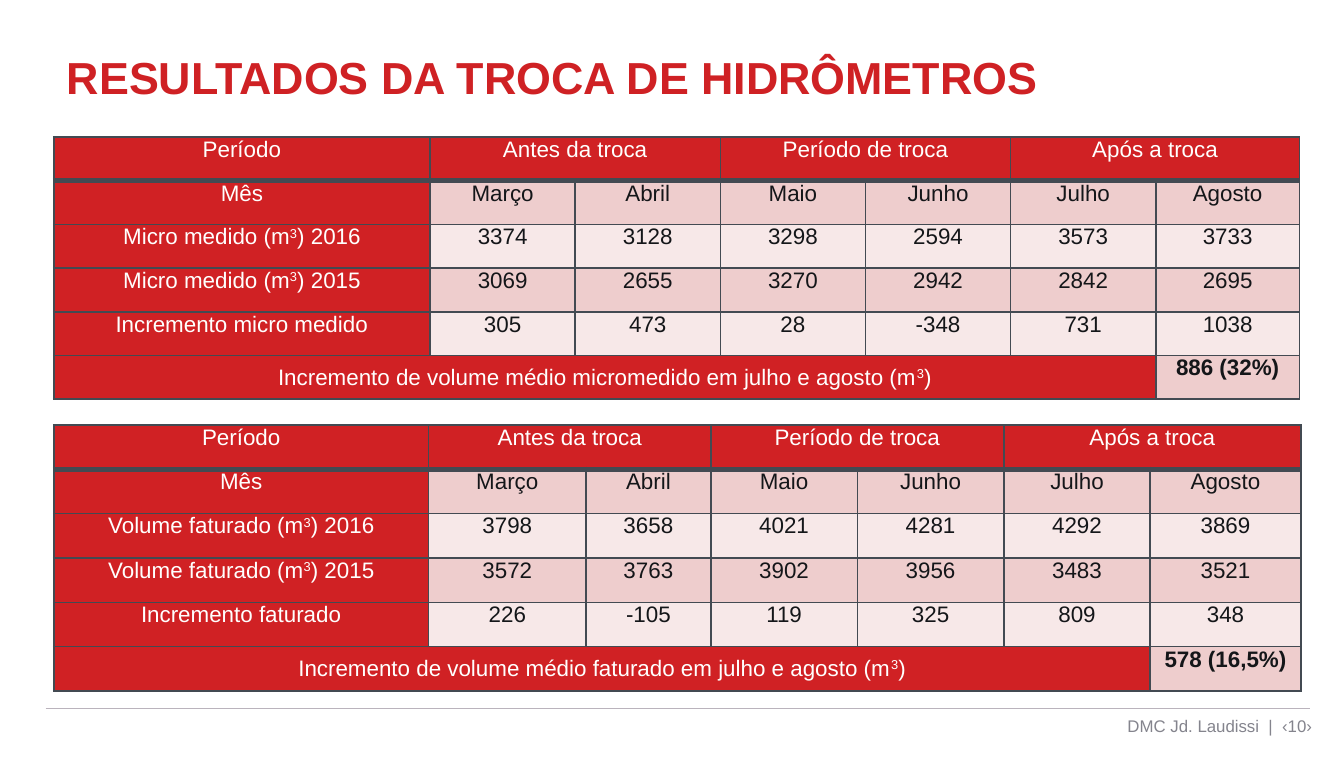
"""Build the slide comparing water volumes before and after the meter replacement."""
import dataclasses

import lxml.etree
import pptx
import pptx.dml.color
import pptx.enum.shapes
import pptx.enum.text
import pptx.oxml.ns
import pptx.util

Inches = pptx.util.Inches
ALIGN = pptx.enum.text.PP_ALIGN
ANCHOR = pptx.enum.text.MSO_ANCHOR

COLORS = {
    "title": "CF2124", "header": "D02124", "header_text": "FFFFFE",
    "band_dark": "EECDCD", "band_light": "F7E8E8", "value_text": "141619",
    "border": "434A52", "rule": "BAB3BC", "footer": "84848D",
}
CELL_FORMAT = {
    "margin_left": Inches(0.07), "margin_right": Inches(0.07),
    "margin_top": Inches(0), "margin_bottom": Inches(0),
}
TABLE_FORMAT = {"first_row": False, "horz_banding": False}
PERIODS = ["Antes da troca", "Período de troca", "Após a troca"]
MONTHS = ["Março", "Abril", "Maio", "Junho", "Julho", "Agosto"]


@dataclasses.dataclass
class VolumeTable:
    top: float
    row_height: float
    widths: list[float]
    measure: str
    increment: str
    adjective: str
    volumes_2016: list[int]
    volumes_2015: list[int]
    average: str

    def rows(self) -> list[list[str]]:
        gains = [new - old for new, old in zip(self.volumes_2016, self.volumes_2015)]
        header = ["Período"] + [text for period in PERIODS for text in (period, "")]
        summary = f"Incremento de volume médio {self.adjective} em julho e agosto (m³)"
        return [
            header,
            ["Mês", *MONTHS],
            [f"{self.measure} (m³) 2016", *map(str, self.volumes_2016)],
            [f"{self.measure} (m³) 2015", *map(str, self.volumes_2015)],
            [f"Incremento {self.increment}", *map(str, gains)],
            [summary, "", "", "", "", "", self.average],
        ]


VOLUME_TABLES = [
    VolumeTable(1.02, 0.325, [2.8, 1.08, 1.08, 1.08, 1.08, 1.08, 1.07],
                "Micro medido", "micro medido", "micromedido",
                [3374, 3128, 3298, 2594, 3573, 3733],
                [3069, 2655, 3270, 2942, 2842, 2695], "886 (32%)"),
    VolumeTable(3.16, 0.33, [2.79, 1.17, 0.93, 1.09, 1.09, 1.09, 1.12],
                "Volume faturado", "faturado", "faturado",
                [3798, 3658, 4021, 4281, 4292, 3869],
                [3572, 3763, 3902, 3956, 3483, 3521], "578 (16,5%)"),
]


def rgb(name: str) -> pptx.dml.color.RGBColor:
    return pptx.dml.color.RGBColor.from_string(COLORS[name])


def apply_format(target: object, values: dict) -> None:
    for attribute, value in values.items():
        setattr(target, attribute, value)


def write(frame, text: str, size: float, color: str, bold: bool, align) -> None:
    paragraph = frame.paragraphs[0]
    paragraph.alignment = align
    before, cubed, after = text.partition("³")
    for part, raised in ((before, False), ("3" if cubed else "", True), (after, False)):
        if part:
            run = paragraph.add_run()
            run.text = part
            apply_format(run.font, {"name": "Arial", "size": pptx.util.Pt(size), "bold": bold})
            run.font.color.rgb = rgb(color)
            if raised:
                run.font._element.set("baseline", "30000")


def add_label(slide, box: tuple, text: str, size: float, color: str, bold: bool, align) -> None:
    frame = slide.shapes.add_textbox(*map(Inches, box)).text_frame
    apply_format(frame, {"word_wrap": True, "vertical_anchor": ANCHOR.MIDDLE})
    write(frame, text, size, color, bold, align)


def add_borders(cell, bottom: float) -> None:
    properties = cell._tc.get_or_add_tcPr()
    qn = pptx.oxml.ns.qn
    for side, width in {"L": 1, "R": 1, "T": 1, "B": bottom}.items():
        border = lxml.etree.SubElement(
            properties, qn(f"a:ln{side}"), w=str(pptx.util.Pt(width)))
        fill = lxml.etree.SubElement(border, qn("a:solidFill"))
        lxml.etree.SubElement(fill, qn("a:srgbClr"), val=COLORS["border"])


def add_volume_table(slide, volume: VolumeTable) -> None:
    rows = volume.rows()
    last_row, last_column = len(rows) - 1, len(volume.widths) - 1
    table = slide.shapes.add_table(
        len(rows), len(volume.widths), Inches(0.4), Inches(volume.top),
        Inches(sum(volume.widths)), Inches(volume.row_height * len(rows))).table
    apply_format(table, TABLE_FORMAT)
    for column, width in zip(table.columns, volume.widths):
        column.width = Inches(width)
    for row in table.rows:
        row.height = Inches(volume.row_height)
    for r, texts in enumerate(rows):
        for c, text in enumerate(texts):
            cell = table.cell(r, c)
            is_header = r == 0 or c == 0 or (r == last_row and c < last_column)
            is_total = r == last_row and c == last_column
            band = "band_dark" if r % 2 else "band_light"
            apply_format(cell, CELL_FORMAT)
            add_borders(cell, 3 if r == 0 else 1)
            cell.fill.solid()
            cell.fill.fore_color.rgb = rgb("header" if is_header else band)
            write(cell.text_frame, text, 12, "header_text" if is_header else "value_text",
                  is_total, ALIGN.CENTER)
    for c in range(1, last_column, 2):
        table.cell(0, c).merge(table.cell(0, c + 1))
    summary = table.cell(last_row, 0)
    summary.merge(table.cell(last_row, last_column - 1))
    summary.vertical_anchor = ANCHOR.MIDDLE


def add_footer_rule(slide) -> None:
    rule = slide.shapes.add_connector(
        pptx.enum.shapes.MSO_CONNECTOR.STRAIGHT,
        Inches(0.34), Inches(5.27), Inches(9.75), Inches(5.27))
    rule.line.color.rgb = rgb("rule")
    rule.line.width = pptx.util.Pt(0.5)
    lxml.etree.SubElement(rule._element.spPr, pptx.oxml.ns.qn("a:effectLst"))


def main() -> None:
    presentation = pptx.Presentation()
    apply_format(presentation, {"slide_width": Inches(10), "slide_height": Inches(5.63)})
    slide = presentation.slides.add_slide(presentation.slide_layouts[6])
    add_footer_rule(slide)
    add_label(slide, (0.4, 0.32, 9, 0.5), "RESULTADOS DA TROCA DE HIDRÔMETROS",
              24, "title", True, ALIGN.LEFT)
    add_label(slide, (5.74, 5.25, 4.12, 0.3), "DMC Jd. Laudissi  |  ‹10›",
              9, "footer", False, ALIGN.RIGHT)
    for volume in VOLUME_TABLES:
        add_volume_table(slide, volume)
    presentation.save("out.pptx")


if __name__ == "__main__":
    main()
